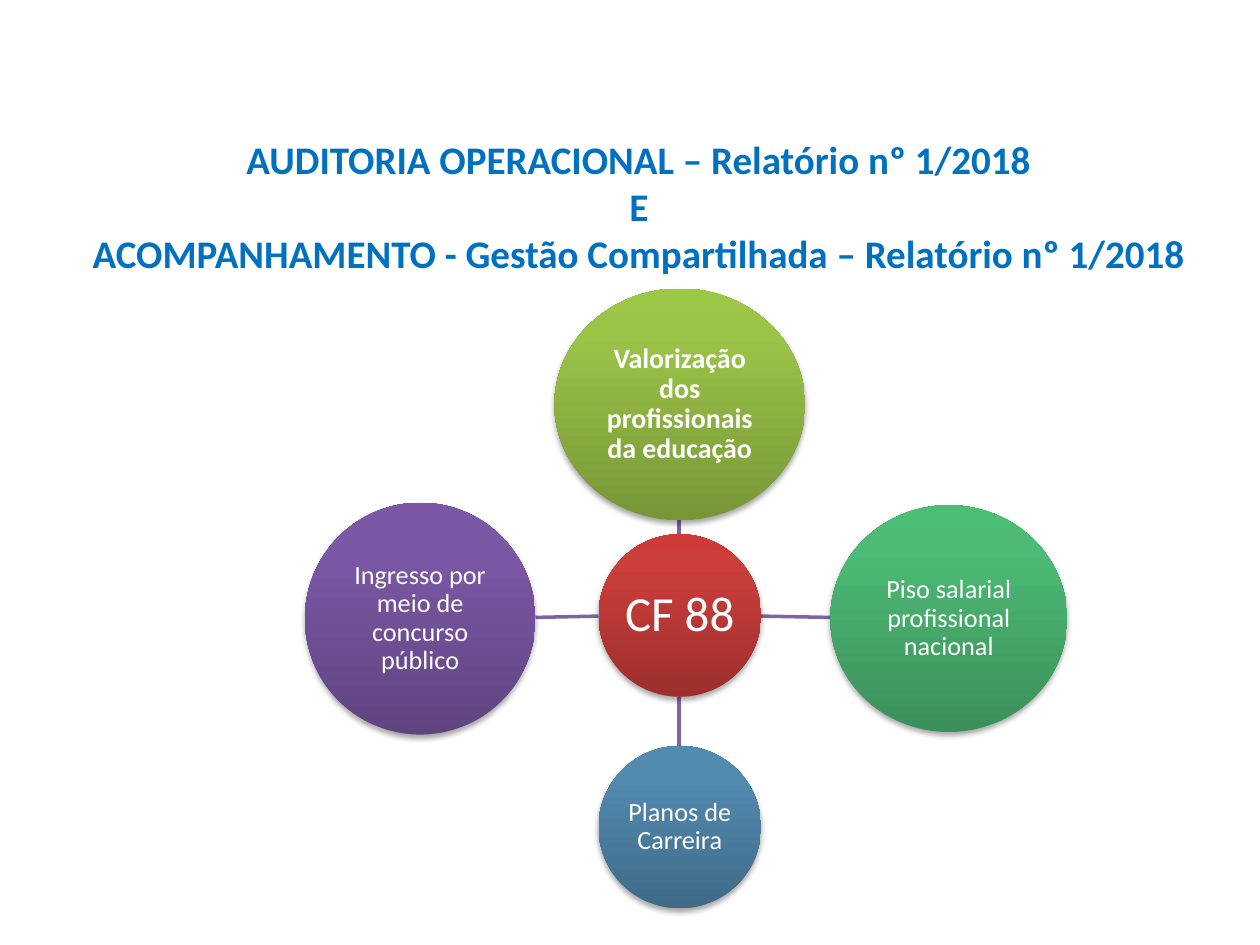
"""Build the slide on teacher valuation under CF 88, with a hub and four linked circles."""
import copy

import pptx
import pptx.dml.color
import pptx.enum.shapes
import pptx.enum.text
import pptx.oxml
import pptx.oxml.ns
import pptx.util
from lxml import etree

Inches = pptx.util.Inches
Pt = pptx.util.Pt
RGBColor = pptx.dml.color.RGBColor
qn = pptx.oxml.ns.qn

WHITE = RGBColor(0xFF, 0xFF, 0xFF)
TITLE_BLUE = RGBColor(0x00, 0x70, 0xC0)
LINK_PURPLE = RGBColor(0x80, 0x64, 0xA2)
REDS = RGBColor(0x9C, 0x2F, 0x2D), RGBColor(0xCB, 0x3E, 0x3A), RGBColor(0xCE, 0x3B, 0x37)
LIMES = RGBColor(0x77, 0x97, 0x37), RGBColor(0x9B, 0xC3, 0x48), RGBColor(0x9D, 0xC7, 0x46)
GREENS = RGBColor(0x3B, 0x8F, 0x5A), RGBColor(0x4D, 0xBA, 0x75), RGBColor(0x4B, 0xBD, 0x75)
BLUES = RGBColor(0x3F, 0x6A, 0x88), RGBColor(0x52, 0x8A, 0xB0), RGBColor(0x51, 0x8B, 0xB3)
PURPLES = RGBColor(0x5F, 0x44, 0x80), RGBColor(0x7B, 0x58, 0xA6), RGBColor(0x7C, 0x57, 0xA8)

SHADOW = (
    '<a:outerShdw xmlns:a="http://schemas.openxmlformats.org/drawingml/2006/main" '
    'blurRad="40000" dist="23000" dir="5400000" rotWithShape="0">'
    '<a:srgbClr val="000000"><a:alpha val="35000"/></a:srgbClr></a:outerShdw>'
)

deck = pptx.Presentation()
deck.slide_width, deck.slide_height = Inches(10), Inches(7.5)
page = deck.slides.add_slide(deck.slide_layouts[6])

links = [
    (5.39, 4.24, 5.39, 4.13),
    (6.04, 4.89, 6.59, 4.9),
    (5.39, 5.53, 5.39, 5.92),
    (4.75, 4.89, 4.25, 4.9),
]
for ends in links:
    link = page.shapes.add_connector(
        pptx.enum.shapes.MSO_CONNECTOR.STRAIGHT, *[Inches(end) for end in ends]
    )
    link.line.color.rgb = LINK_PURPLE
    link.line.width = Pt(2)
    etree.SubElement(link._element.spPr, qn("a:effectLst"))

circles = [
    ("CF 88", 4.75, 4.24, 1.29, 1.29, REDS, 28, False),
    ("Valorização dos profissionais da educação", 4.4, 2.29, 1.99, 1.84, LIMES, 16, True),
    ("Piso salarial profissional nacional", 6.59, 4.01, 1.88, 1.8, GREENS, 15, False),
    ("Planos de Carreira", 4.75, 5.92, 1.29, 1.29, BLUES, 15, False),
    ("Ingresso por meio de concurso público", 2.42, 3.99, 1.83, 1.84, PURPLES, 15, False),
]
for text, left, top, width, height, shades, size, bold in circles:
    circle = page.shapes.add_shape(
        pptx.enum.shapes.MSO_SHAPE.OVAL,
        Inches(left), Inches(top), Inches(width), Inches(height),
    )
    circle.line.fill.background()
    circle.fill.gradient()
    circle.fill.gradient_angle = 90
    stop_list = circle._element.spPr.find(".//" + qn("a:gsLst"))
    stop_list.insert(1, copy.deepcopy(stop_list[1]))
    for stop, position, shade in zip(circle.fill.gradient_stops, (0, 0.8, 1), shades):
        stop.position = position
        stop.color.rgb = shade
    circle.shadow.inherit = False
    effects = circle._element.spPr.find(qn("a:effectLst"))
    effects.append(pptx.oxml.parse_xml(SHADOW))

    frame = circle.text_frame
    frame.word_wrap = True
    frame.vertical_anchor = pptx.enum.text.MSO_ANCHOR.MIDDLE
    frame.margin_left = frame.margin_right = Inches(0.01)
    frame.margin_top = frame.margin_bottom = Inches(0.01)
    para = frame.paragraphs[0]
    para.text = text
    para.alignment = pptx.enum.text.PP_ALIGN.CENTER
    para.line_spacing = 0.9
    para.font.name = "Calibri"
    para.font.size = Pt(size)
    para.font.bold = bold
    para.font.color.rgb = WHITE

title = page.shapes.add_textbox(Inches(0.13), Inches(1.07), Inches(9.88), Inches(1.13))
frame = title.text_frame
frame.word_wrap = True
frame.vertical_anchor = pptx.enum.text.MSO_ANCHOR.MIDDLE
frame.margin_top = frame.margin_bottom = 0
frame.text = "\n".join([
    "AUDITORIA OPERACIONAL – Relatório nº 1/2018",
    "E",
    "ACOMPANHAMENTO - Gestão Compartilhada – Relatório nº 1/2018",
])
for para in frame.paragraphs:
    para.alignment = pptx.enum.text.PP_ALIGN.CENTER
    para.font.name = "Calibri"
    para.font.size = Pt(22.3)
    para.font.bold = True
    para.font.color.rgb = TITLE_BLUE

deck.save("out.pptx")
